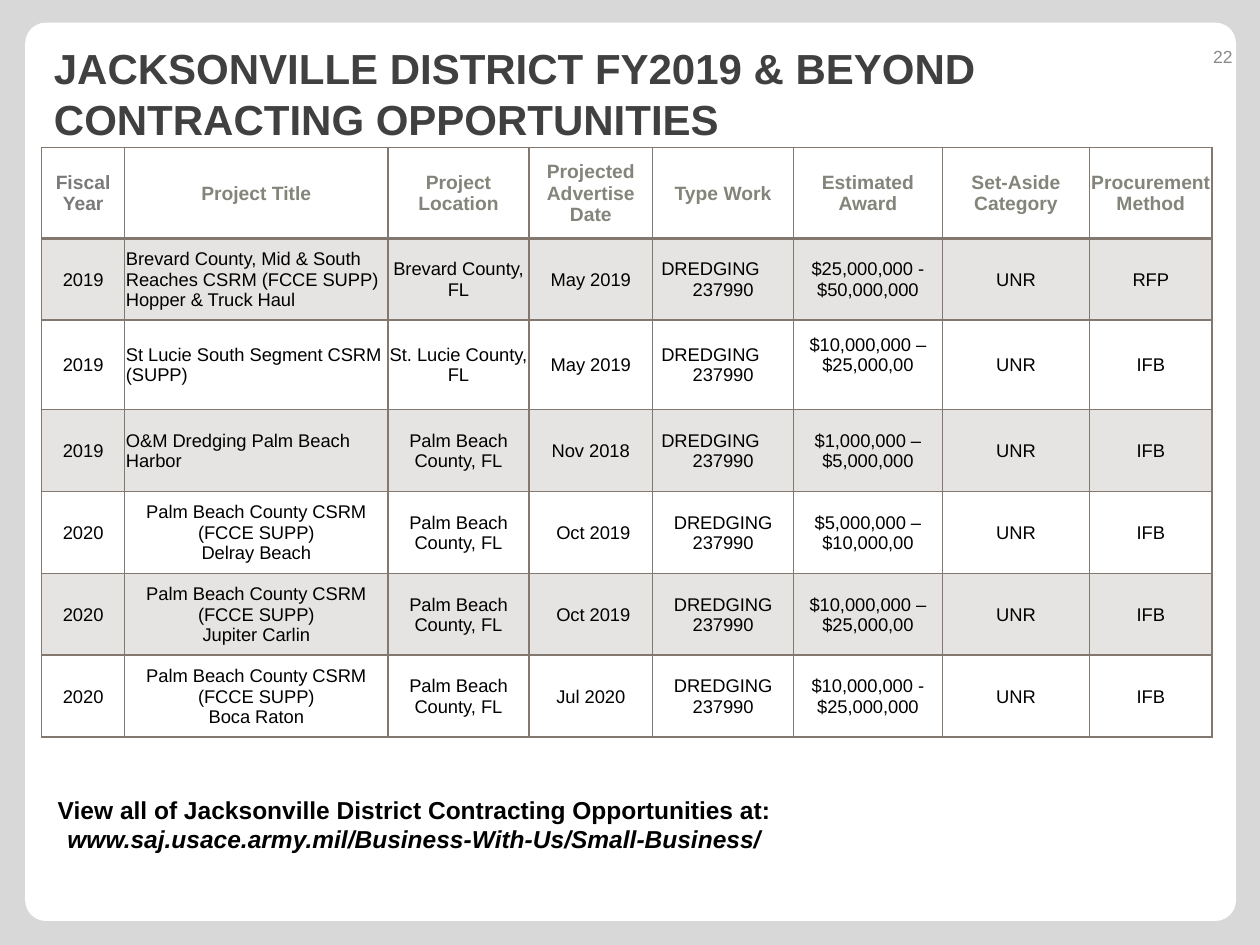
from lxml.etree import SubElement
from pptx import Presentation
from pptx.dml.color import RGBColor
from pptx.enum.shapes import MSO_SHAPE
from pptx.enum.text import MSO_ANCHOR, PP_ALIGN
from pptx.oxml.ns import qn
from pptx.util import Inches, Pt

COLORS = {
    "backdrop": "D8D8D8",
    "panel": "FFFFFF",
    "title": "404040",
    "number": "898989",
    "year": "7A7A7A",
    "header": "83847A",
    "text": "000000",
    "rule": "82786F",
}
COLUMN_WIDTHS = [0.66, 2.09, 1.12, 0.98, 1.12, 1.18, 1.17, 0.97]
ROW_HEIGHTS = [0.72, 0.65, 0.71, 0.65, 0.65, 0.65, 0.65]
HEADERS = [
    "Fiscal Year", "Project Title", "Project Location", "Projected Advertise Date",
    "Type Work", "Estimated Award", "Set-Aside Category", "Procurement Method",
]
WORK = "DREDGING\n237990"
PALM_BEACH = "Palm Beach County, FL"
PALM_PROJECT = "Palm Beach County CSRM (FCCE SUPP)\n"
PROJECTS = [
    ["2019", "Brevard County, Mid & South Reaches CSRM (FCCE SUPP)\nHopper & Truck Haul",
     "Brevard County, FL", "May 2019", WORK, "$25,000,000 - $50,000,000", "UNR", "RFP"],
    ["2019", "St Lucie South Segment CSRM (SUPP)",
     "St. Lucie County, FL", "May 2019", WORK, "$10,000,000 –\n$25,000,00", "UNR", "IFB"],
    ["2019", "O&M Dredging Palm Beach Harbor",
     PALM_BEACH, "Nov 2018", WORK, "$1,000,000 –\n$5,000,000", "UNR", "IFB"],
    ["2020", PALM_PROJECT + "Delray Beach",
     PALM_BEACH, "Oct 2019", WORK, "$5,000,000 –\n$10,000,00", "UNR", "IFB"],
    ["2020", PALM_PROJECT + "Jupiter Carlin",
     PALM_BEACH, "Oct 2019", WORK, "$10,000,000 –\n$25,000,00", "UNR", "IFB"],
    ["2020", PALM_PROJECT + "Boca Raton",
     PALM_BEACH, "Jul 2020", WORK, "$10,000,000 - $25,000,000", "UNR", "IFB"],
]


class SlideBuilder:
    font = "Arial"

    def __init__(self, page):
        self.page = page

    def color(self, name):
        return RGBColor.from_string(COLORS[name])

    def background(self, name):
        fill = self.page.background.fill
        fill.solid()
        fill.fore_color.rgb = self.color(name)

    def panel(self, left, top, width, height, rounding):
        shape = self.page.shapes.add_shape(
            MSO_SHAPE.ROUNDED_RECTANGLE,
            Inches(left), Inches(top), Inches(width), Inches(height))
        shape.adjustments[0] = rounding
        shape.shadow.inherit = False
        shape.fill.solid()
        shape.fill.fore_color.rgb = self.color("panel")
        shape.line.fill.background()

    def set_text(self, frame, text, size, color, bold=False, align=PP_ALIGN.LEFT):
        frame.text = text
        for paragraph in frame.paragraphs:
            paragraph.alignment = align
            paragraph.font.name = self.font
            paragraph.font.size = Pt(size)
            paragraph.font.bold = bold
            paragraph.font.color.rgb = self.color(color)

    def text(self, left, top, width, height, text, size, color,
             bold=False, align=PP_ALIGN.LEFT, anchor=MSO_ANCHOR.MIDDLE):
        box = self.page.shapes.add_textbox(
            Inches(left), Inches(top), Inches(width), Inches(height))
        frame = box.text_frame
        frame.word_wrap = True
        frame.vertical_anchor = anchor
        self.set_text(frame, text, size, color, bold, align)
        return frame

    def indent(self, paragraph, length):
        paragraph._p.get_or_add_pPr().set("marL", str(Inches(length)))

    def borders(self, cell, bottom):
        properties = cell._tc.get_or_add_tcPr()
        for side, width in (("L", 1), ("R", 1), ("T", 1), ("B", bottom)):
            line = SubElement(properties, qn(f"a:ln{side}"), w=str(Pt(width)))
            fill = SubElement(line, qn("a:solidFill"))
            SubElement(fill, qn("a:srgbClr"), val=COLORS["rule"])

    def tint(self, cell, percent):
        cell.fill.solid()
        cell.fill.fore_color.rgb = self.color("rule")
        shade = cell._tc.tcPr.find(qn("a:solidFill")).find(qn("a:srgbClr"))
        SubElement(shade, qn("a:alpha"), val=str(percent * 1000))

    def cell(self, cell, text, size, color, bold, align, bottom, shaded):
        cell.margin_left = cell.margin_right = cell.margin_top = Inches(0.01)
        cell.margin_bottom = 0
        cell.vertical_anchor = MSO_ANCHOR.MIDDLE
        self.set_text(cell.text_frame, text, size, color, bold, align)
        self.borders(cell, bottom)
        if shaded:
            self.tint(cell, 20)
        else:
            cell.fill.background()

    def table(self, left, top, headers, projects):
        table = self.page.shapes.add_table(
            len(ROW_HEIGHTS), len(COLUMN_WIDTHS), Inches(left), Inches(top),
            Inches(sum(COLUMN_WIDTHS)), Inches(sum(ROW_HEIGHTS))).table
        table.first_row = table.horz_banding = False
        for column, width in zip(table.columns, COLUMN_WIDTHS):
            column.width = Inches(width)
        for row, height in zip(table.rows, ROW_HEIGHTS):
            row.height = Inches(height)
        for index, header in enumerate(headers):
            color = "year" if index == 0 else "header"
            self.cell(table.cell(0, index), header, 11, color, True,
                      PP_ALIGN.CENTER, 2, False)
        for number, project in enumerate(projects, 1):
            for index, value in enumerate(project):
                left_aligned = index == 1 and project[0] == "2019"
                align = PP_ALIGN.LEFT if left_aligned else PP_ALIGN.CENTER
                self.cell(table.cell(number, index), value, 10.5, "text", False,
                          align, 1, number in (1, 3, 5))
            if project[0] == "2019":
                work = table.cell(number, 4).text_frame.paragraphs[0]
                work.alignment = PP_ALIGN.LEFT
                self.indent(work, 0.06)
            if project[3].startswith("Oct"):
                self.indent(table.cell(number, 3).text_frame.paragraphs[0], 0.04)
        table.cell(2, 5).margin_bottom = Inches(0.16)


def main():
    deck = Presentation()
    deck.slide_width, deck.slide_height = Inches(10), Inches(7.5)
    builder = SlideBuilder(deck.slides.add_slide(deck.slide_layouts[6]))
    builder.background("backdrop")
    builder.panel(0.2, 0.18, 9.61, 7.13, 0.023)
    builder.text(0.33, 0.3, 9.17, 0.88,
                 "JACKSONVILLE DISTRICT FY2019 & BEYOND CONTRACTING OPPORTUNITIES",
                 24, "title", bold=True)
    builder.text(9.08, 0.25, 0.8, 0.4, "22", 10, "number", align=PP_ALIGN.RIGHT)
    builder.table(0.33, 1.17, HEADERS, PROJECTS)
    footer = builder.text(
        -0.33, 6.26, 7.24, 0.57,
        "View all of Jacksonville District Contracting Opportunities at:\n"
        "www.saj.usace.army.mil/Business-With-Us/Small-Business/",
        14, "text", bold=True, align=PP_ALIGN.CENTER, anchor=MSO_ANCHOR.TOP)
    footer.paragraphs[1].font.italic = True
    deck.save("out.pptx")


if __name__ == "__main__":
    main()
